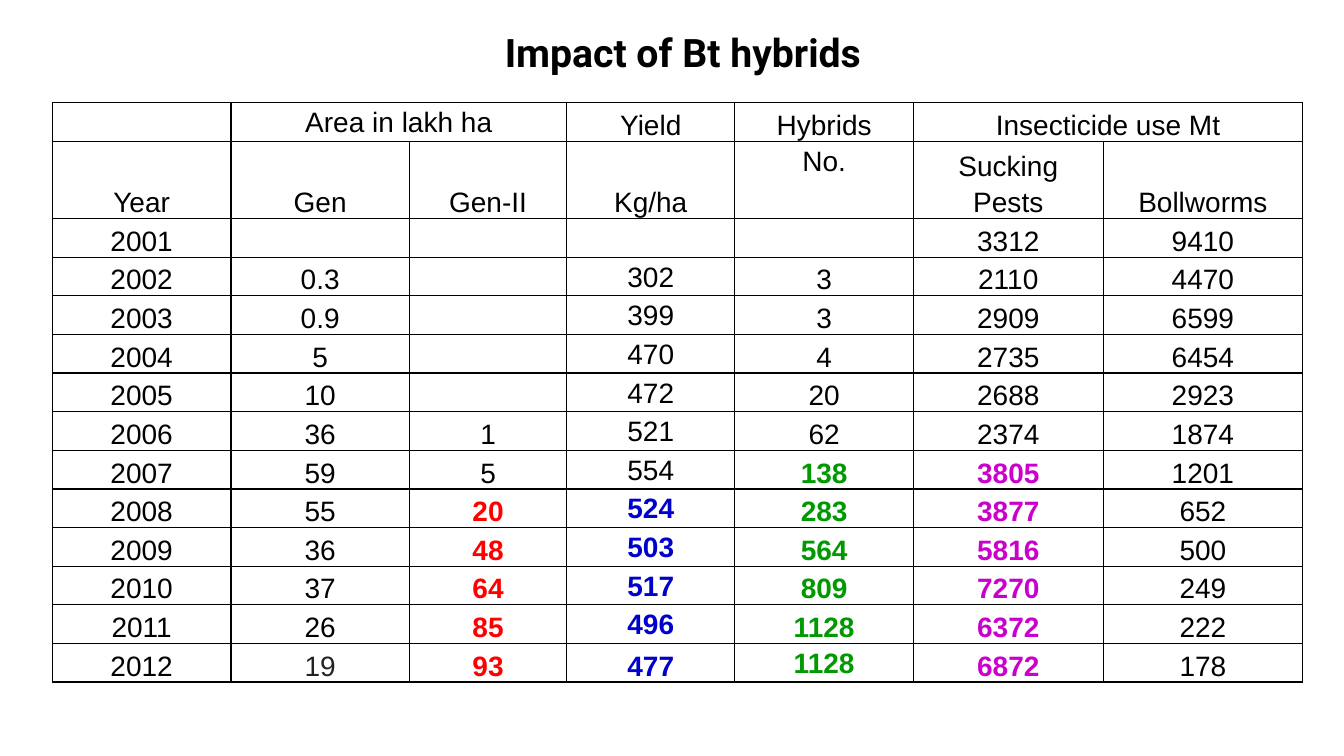
from lxml import etree
from pptx import Presentation
from pptx.dml.color import RGBColor
from pptx.enum.text import MSO_ANCHOR, PP_ALIGN
from pptx.oxml.ns import qn
from pptx.util import Cm, Pt

BLACK = RGBColor(0x00, 0x00, 0x00)
GREY = RGBColor(0x22, 0x22, 0x22)
WHITE = RGBColor(0xFF, 0xFF, 0xFF)
RED = RGBColor(0xFF, 0x00, 0x00)
BLUE = RGBColor(0x00, 0x00, 0xCC)
GREEN = RGBColor(0x00, 0x99, 0x00)
PURPLE = RGBColor(0xCC, 0x00, 0xCC)
CENTER = PP_ALIGN.CENTER
TOP, BOTTOM = MSO_ANCHOR.TOP, MSO_ANCHOR.BOTTOM

ROWS = [
    ["", "Area in lakh ha", "", "Yield", "Hybrids", "Insecticide use Mt", ""],
    ["Year", "Gen", "Gen-II", "Kg/ha", "No.", "Sucking Pests", "Bollworms"],
    ["2001", "", "", "", "", "3312", "9410"],
    ["2002", "0.3", "", "302", "3", "2110", "4470"],
    ["2003", "0.9", "", "399", "3", "2909", "6599"],
    ["2004", "5", "", "470", "4", "2735", "6454"],
    ["2005", "10", "", "472", "20", "2688", "2923"],
    ["2006", "36", "1", "521", "62", "2374", "1874"],
    ["2007", "59", "5", "554", "138", "3805", "1201"],
    ["2008", "55", "20", "524", "283", "3877", "652"],
    ["2009", "36", "48", "503", "564", "5816", "500"],
    ["2010", "37", "64", "517", "809", "7270", "249"],
    ["2011", "26", "85", "496", "1128", "6372", "222"],
    ["2012", "19", "93", "477", "1128", "6872", "178"],
]
COL_WIDTHS = [4.5, 4.5, 3.96, 4.24, 4.5, 4.78, 5.03]
TABLE_H = 14.6
ROW_H = TABLE_H / (len(ROWS) + 1)  # the second header row is two rows tall

# Column: (first highlighted row, colour)
HIGHLIGHTS = {2: (9, RED), 3: (9, BLUE), 4: (8, GREEN), 5: (8, PURPLE)}
TOP_CELLS = {(0, 1), (1, 4), (13, 4)} | {(row, 3) for row in range(3, 13)}


def add_text(p, text, **font):
    p.alignment = CENTER
    r = p.add_run()
    r.text = text
    r.font.color.rgb = font.pop("color")
    for name, value in font.items():
        setattr(r.font, name, value)


def add_borders(cell):
    tcPr = cell._tc.get_or_add_tcPr()
    for side in ("a:lnL", "a:lnR", "a:lnT", "a:lnB"):
        ln = etree.SubElement(tcPr, qn(side), w=str(Pt(1)))
        fill = etree.SubElement(ln, qn("a:solidFill"))
        etree.SubElement(fill, qn("a:srgbClr"), val=str(BLACK))


prs = Presentation()
prs.slide_width, prs.slide_height = Cm(33.87), Cm(19.05)
s = prs.slides.add_slide(prs.slide_layouts[6])

# Table frame
table = s.shapes.add_table(len(ROWS), len(COL_WIDTHS), Cm(1.32), Cm(2.59),
                           Cm(sum(COL_WIDTHS)), Cm(TABLE_H)).table
table.first_row = False
table.horz_banding = False
for column, width in zip(table.columns, COL_WIDTHS):
    column.width = Cm(width)
for i, row in enumerate(table.rows):
    row.height = Cm(ROW_H * 2 if i == 1 else ROW_H)

# Cells
for i, values in enumerate(ROWS):
    for j, text in enumerate(values):
        cell = table.cell(i, j)
        add_borders(cell)
        if i >= 2 and j in (2, 3):
            cell.fill.solid()
            cell.fill.fore_color.rgb = WHITE
        else:
            cell.fill.background()
        cell.margin_top = cell.margin_bottom = 0
        cell.vertical_anchor = TOP if (i, j) in TOP_CELLS else BOTTOM
        if not text:
            continue
        start, color = HIGHLIGHTS.get(j, (len(ROWS), BLACK))
        bold = i >= start
        if not bold:
            color = GREY if (i, j) == (13, 1) else BLACK
        p = cell.text_frame.paragraphs[0]
        p.line_spacing = 1.15
        add_text(p, text, name="Arial", size=Pt(20), bold=bold, color=color)

# Header groups
for j in (1, 5):
    table.cell(0, j).merge(table.cell(0, j + 1))

# Title
tf = s.shapes.add_textbox(Cm(1.6), Cm(0.58), Cm(31.22), Cm(1.45)).text_frame
tf.word_wrap = True
add_text(tf.paragraphs[0], "Impact of Bt hybrids",
         name="Roboto", size=Pt(28), bold=True, color=BLACK)

prs.save("out.pptx")
